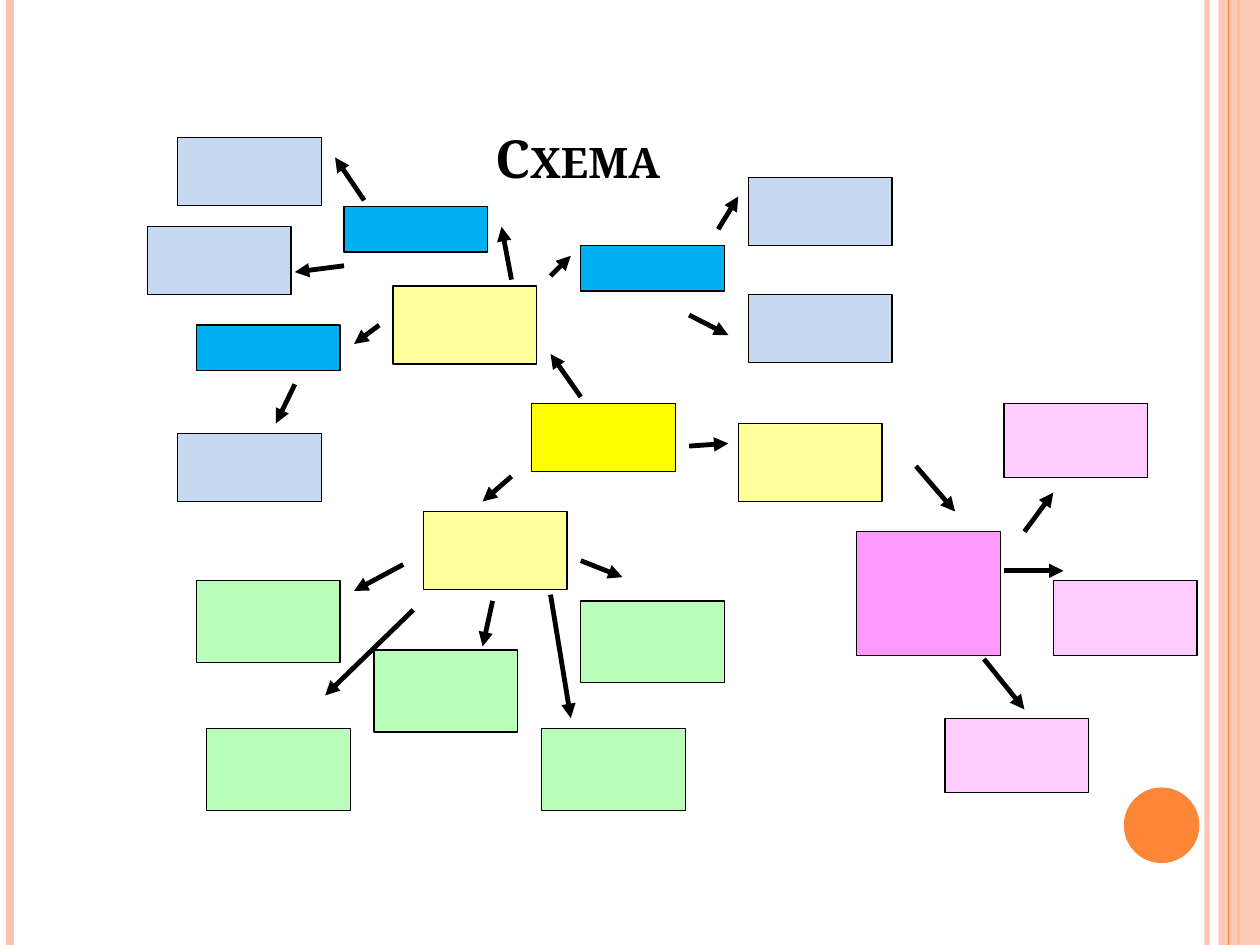
from lxml import etree
from pptx import Presentation
from pptx.dml.color import RGBColor
from pptx.enum.shapes import MSO_CONNECTOR, MSO_SHAPE
from pptx.enum.text import MSO_ANCHOR, PP_ALIGN
from pptx.oxml.ns import qn
from pptx.util import Pt

STRAIGHT = MSO_CONNECTOR.STRAIGHT
RECTANGLE, OVAL = MSO_SHAPE.RECTANGLE, MSO_SHAPE.OVAL
BOTTOM, CENTER = MSO_ANCHOR.BOTTOM, PP_ALIGN.CENTER

PAGE_WIDTH, PAGE_HEIGHT = 720, 540
BOX_WIDTH = 82.1
TITLE = "Схема"
TITLE_AREA = (36, 21.6, 588.2, 90)
TITLE_FONT = {"name": "Cambria", "size": Pt(30), "bold": True}
BLACK, PEACH, ORANGE = "000000", "FEC3AE", "FE8637"

STRIPES_BELOW = [(689.8, PEACH, 3, 93), (5.8, PEACH, 4.5, 100), (707.8, ORANGE, 1.5, 100)]
STRIPES_ABOVE = [(702, ORANGE, 0.75, 100)]
BAND = (696.2, 0, 23.8, PAGE_HEIGHT)
DISC = (642.2, 450, 43.2, 43.2)

BOX_GROUPS = [
    ("FFFF00", 38.9, [(303.8, 230.4)]),
    ("FFFF99", 44.6, [(241.9, 292.3), (421.9, 241.9), (224.6, 163.4)]),
    ("00B0F0", 25.9, [(331.9, 140.4), (112.3, 185.8), (196.6, 118.1)]),
    ("C6D9F1", 38.9, [(84.2, 129.6), (101.5, 78.5), (101.5, 247.7),
                      (427.7, 101.5), (427.7, 168.5)]),
    ("FF99FF", 70.6, [(489.6, 303.8)]),
    ("FFCCFF", 42.5, [(573.8, 230.4), (601.9, 331.9), (540, 410.4)]),
    ("B9FFBB", 46.8, [(112.3, 331.9), (213.8, 371.5), (331.9, 343.4),
                      (309.6, 416.2), (118.1, 416.2)]),
]

ARROWS = [
    (331.9, 226.8, 314.6, 202.3), (292.3, 272.2, 275.8, 286.6),
    (393.8, 254.9, 416.2, 253.4), (292.3, 159.8, 286.6, 129.6),
    (314.6, 157.7, 326.2, 146.2), (216.7, 185.8, 202.3, 196.6),
    (208.1, 114.5, 191.5, 90), (168.5, 219.6, 157.7, 241.9),
    (196.6, 151.9, 168.5, 155.5), (410.4, 131, 421.9, 112.3),
    (393.8, 180, 416.2, 191.5), (230.4, 322.6, 202.3, 337.7),
    (331.9, 320.4, 355.7, 329.8), (281.5, 343.4, 275.8, 369.4),
    (236.2, 348.5, 185.8, 397.4), (314.6, 339.8, 326.2, 410.4),
    (523.4, 266.4, 545.8, 292.3), (585.4, 303.8, 601.9, 281.5),
    (573.8, 326.2, 607.7, 326.2), (562.3, 376.6, 585.4, 405.4),
]


def paint(fill, color, opacity=100):
    fill.solid()
    fill.fore_color.rgb = RGBColor.from_string(color)
    if opacity < 100:
        swatch = fill._xPr.find(".//" + qn("a:srgbClr"))
        etree.SubElement(swatch, qn("a:alpha"), val=str(opacity * 1000))


def add_block(page, kind, area, color, opacity=100, outline=0):
    block = page.shapes.add_shape(kind, *map(Pt, area))
    block.shadow.inherit = False
    paint(block.fill, color, opacity)
    if outline:
        block.line.width = Pt(outline)
        paint(block.line.fill, BLACK)
    else:
        block.line.fill.background()


def add_line(page, ends, color, width, opacity=100, arrow=False):
    line = page.shapes.add_connector(STRAIGHT, *map(Pt, ends))
    line.line.width = Pt(width)
    paint(line.line.fill, color, opacity)
    properties = line._element.spPr
    if arrow:
        etree.SubElement(properties.find(qn("a:ln")), qn("a:tailEnd"), type="triangle")
    etree.SubElement(properties, qn("a:effectLst"))


def add_stripes(page, stripes):
    for x, color, width, opacity in stripes:
        add_line(page, (x, 0, x, PAGE_HEIGHT), color, width, opacity)


def add_title(page):
    title = page.shapes.title
    for side, length in zip(("left", "top", "width", "height"), TITLE_AREA):
        setattr(title, side, Pt(length))
    title.text_frame.vertical_anchor = BOTTOM
    para = title.text_frame.paragraphs[0]
    para.alignment = CENTER
    span = para.add_run()
    span.text = TITLE
    for name, value in TITLE_FONT.items():
        setattr(span.font, name, value)
    paint(span.font.fill, BLACK)
    span._r.get_or_add_rPr().set("cap", "small")


def main():
    deck = Presentation()
    deck.slide_width, deck.slide_height = Pt(PAGE_WIDTH), Pt(PAGE_HEIGHT)
    page = deck.slides.add_slide(deck.slide_layouts[5])
    paint(page.background.fill, "FFFFFF")
    add_stripes(page, STRIPES_BELOW)
    add_block(page, RECTANGLE, BAND, PEACH, opacity=87)
    add_stripes(page, STRIPES_ABOVE)
    add_block(page, OVAL, DISC, ORANGE)
    add_title(page)
    for color, height, corners in BOX_GROUPS:
        for left, top in corners:
            add_block(page, RECTANGLE, (left, top, BOX_WIDTH, height), color, outline=0.75)
    for ends in ARROWS:
        add_line(page, ends, BLACK, 2.75, arrow=True)
    deck.save("out.pptx")


if __name__ == "__main__":
    main()
